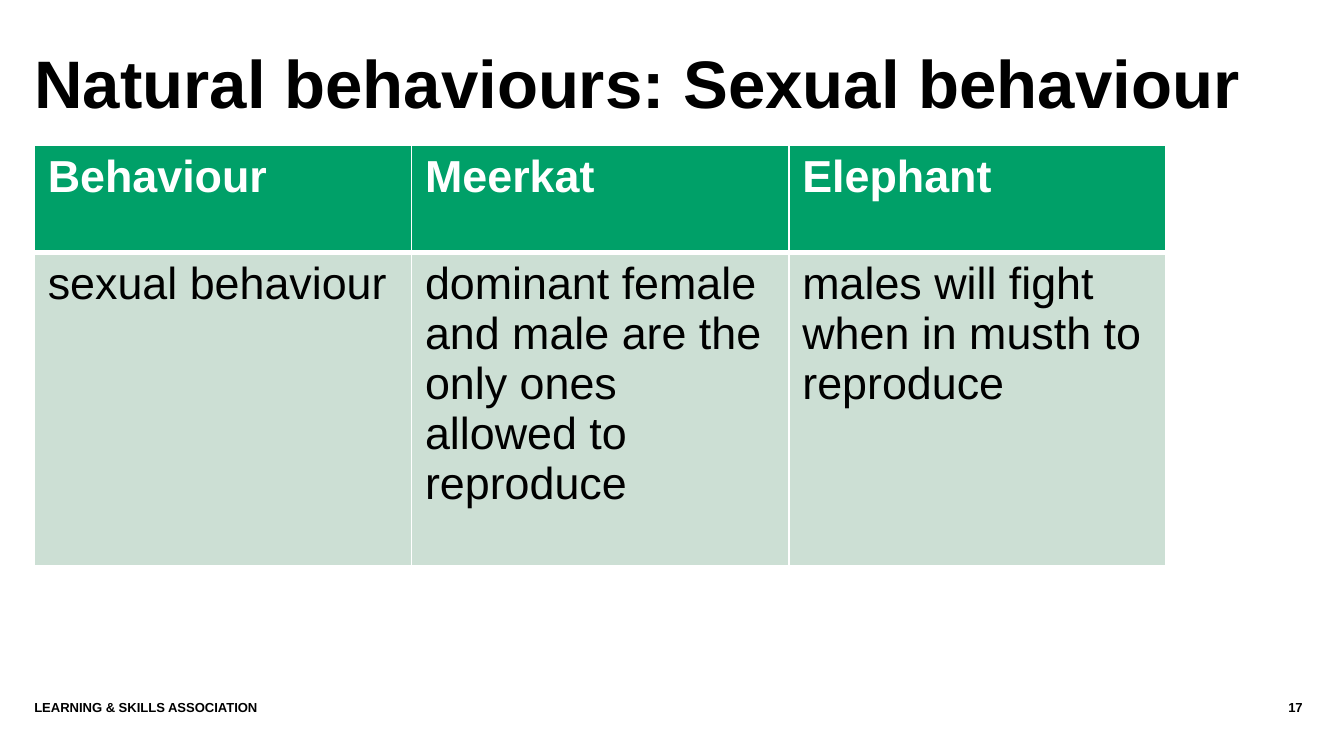
import pptx
import pptx.dml.color
import pptx.enum.text
import pptx.oxml
import pptx.oxml.ns
import pptx.util
from dataclasses import dataclass

Cm = pptx.util.Cm
Pt = pptx.util.Pt
Align = pptx.enum.text.PP_ALIGN
Anchor = pptx.enum.text.MSO_ANCHOR


@dataclass(frozen=True)
class Theme:
    font: str = "Arial"
    ink: str = "000000"
    paper: str = "FFFFFF"
    head: str = "00A068"
    body: str = "CCDFD4"
    title: int = 36
    cell: int = 24
    foot: int = 7
    thin: int = 1
    thick: int = 3


theme = Theme()


def color(code):
    return pptx.dml.color.RGBColor.from_string(code)


def write(para, text, size, ink, bold):
    run = para.add_run()
    run.text = text
    run.font.name = theme.font
    run.font.size = Pt(size)
    run.font.bold = bold
    run.font.color.rgb = color(ink)


def label(slide, box, text, size, align=Align.LEFT, anchor=Anchor.TOP, space=1.0):
    frame = slide.shapes.add_textbox(*map(Cm, box)).text_frame
    frame.word_wrap = True
    frame.margin_left = frame.margin_right = 0
    frame.margin_top = frame.margin_bottom = 0
    frame.vertical_anchor = anchor
    para = frame.paragraphs[0]
    para.alignment = align
    para.line_spacing = space
    write(para, text, size, theme.ink, True)


def edge(cell, sides):
    props = cell._tc.get_or_add_tcPr()
    space = pptx.oxml.ns.nsdecls("a")
    for place, (side, width) in enumerate(sides.items()):
        line = pptx.oxml.parse_xml(
            f'<a:ln{side} {space} w="{Pt(width)}"><a:solidFill>'
            f'<a:srgbClr val="{theme.paper}"/></a:solidFill></a:ln{side}>'
        )
        props.insert(place, line)


def title(slide, box):
    label(slide, box, "Natural behaviours: Sexual behaviour", theme.title,
          anchor=Anchor.MIDDLE, space=0.85)


def grid(slide, box, rows, highs):
    table = slide.shapes.add_table(len(rows), len(rows[0]), *map(Cm, box)).table
    for col in table.columns:
        col.width = Cm(box[2] / len(rows[0]))
    for r, (texts, high) in enumerate(zip(rows, highs)):
        table.rows[r].height = Cm(high)
        top = r == 0
        sides = dict.fromkeys("LRTB", theme.thin)
        sides["B" if top else "T"] = theme.thick if r < 2 else theme.thin
        for c, text in enumerate(texts):
            cell = table.cell(r, c)
            cell.fill.solid()
            cell.fill.fore_color.rgb = color(theme.head if top else theme.body)
            edge(cell, sides)
            write(cell.text_frame.paragraphs[0], text, theme.cell,
                  theme.paper if top else theme.ink, top)


def footer(slide, box):
    left, top, width, height = box
    page = 2.51
    label(slide, (left, top, width - page, height),
          "LEARNING & SKILLS ASSOCIATION", theme.foot)
    label(slide, (left + width - page, top, page, height), "17", theme.foot,
          align=Align.RIGHT)


def main():
    deck = pptx.Presentation()
    deck.slide_width = Cm(25.4)
    deck.slide_height = Cm(14.29)
    slide = deck.slides.add_slide(deck.slide_layouts[6])
    footer(slide, (0.65, 13.23, 23.97, 0.76))
    title(slide, (0.65, 0.69, 23.44, 1.93))
    rows = [
        ("Behaviour", "Meerkat", "Elephant"),
        ("sexual behaviour",
         "dominant female and male are the only ones allowed to reproduce",
         "males will fight when in musth to reproduce"),
    ]
    grid(slide, (0.65, 2.75, 21.39, 7.94), rows, (2.02, 5.92))
    deck.save("out.pptx")


if __name__ == "__main__":
    main()
